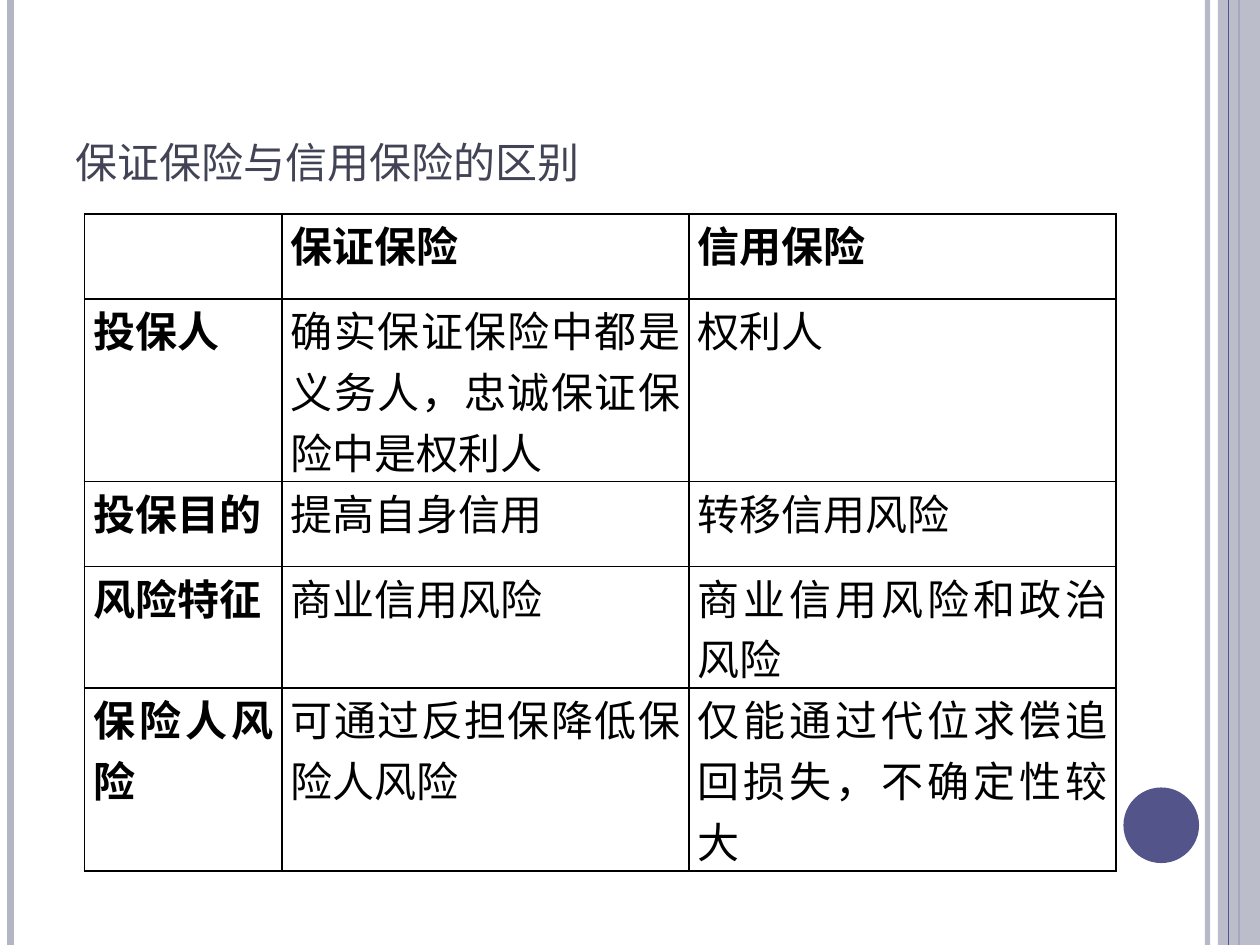
"""Builds a slide with a table comparing guarantee insurance and credit insurance."""
from dataclasses import dataclass

from lxml.etree import SubElement
from pptx import Presentation
from pptx.dml.color import RGBColor as RGB
from pptx.enum.shapes import MSO_CONNECTOR as CONN, MSO_SHAPE as SHAPE
from pptx.enum.text import MSO_ANCHOR as ANCHOR, PP_ALIGN as ALIGN
from pptx.oxml.ns import qn
from pptx.util import Pt


@dataclass(frozen=True)
class Theme:
    pale: str = "B3B4C4"
    accent: str = "53548A"
    title: str = "424456"
    ink: str = "000000"
    title_font: str = "Arial"
    table_font: str = "Times New Roman"
    title_size: float = 30
    table_size: float = 24
    border: float = 1
    inset: float = 5


T = Theme()
WIDTH, HEIGHT = 720, 540
TITLE = "保证保险与信用保险的区别"
ROWS = [
    ("", "保证保险", "信用保险"),
    ("投保人", "确实保证保险中都是义务人，忠诚保证保险中是权利人", "权利人"),
    ("投保目的", "提高自身信用", "转移信用风险"),
    ("风险特征", "商业信用风险", "商业信用风险和政治风险"),
    ("保险人风险", "可通过反担保降低保险人风险", "仅能通过代位求偿追回损失，不确定性较大"),
]
TITLE_BOX = (36, 21.6, 588, 90)
TABLE_POS = (48.2, 122.4)
COL_WIDTHS = (113, 232.6, 244)
ROW_HEIGHTS = (48.4, 97.2, 48.4, 48.4, 97.2)
STRIPES_BELOW = [(690, T.pale, 3, 93), (6, T.pale, 4.5, 100), (708, T.accent, 1.5, 100)]
STRIPES_ABOVE = [(702, T.accent, 0.75, 100)]
BAND = (696, 0, 24, HEIGHT)
DOT = (642, 450, 43.2, 43.2)


def pts(values):
    return [Pt(v) for v in values]


def paint(fill, color, opacity=100):
    fill.solid()
    fill.fore_color.rgb = RGB.from_string(color)
    if opacity < 100:
        clr = fill._xPr.find(".//" + qn("a:srgbClr"))
        SubElement(clr, qn("a:alpha"), val=str(opacity * 1000))


def add_stripe(slide, x, color, width, opacity):
    s = slide.shapes.add_connector(CONN.STRAIGHT, Pt(x), 0, Pt(x), Pt(HEIGHT))
    s.line.width = Pt(width)
    paint(s.line.fill, color, opacity)
    SubElement(s._element.spPr, qn("a:effectLst"))


def add_solid(slide, kind, box, color, opacity=100):
    s = slide.shapes.add_shape(kind, *pts(box))
    s.shadow.inherit = False
    s.line.fill.background()
    paint(s.fill, color, opacity)


def add_run(p, text, font, size, color, bold=False):
    r = p.add_run()
    r.text = text
    r.font.name, r.font.size, r.font.bold = font, Pt(size), bold
    r.font.color.rgb = RGB.from_string(color)
    return r


def add_title(slide):
    s = slide.shapes.title
    s.left, s.top, s.width, s.height = pts(TITLE_BOX)
    tf = s.text_frame
    tf.word_wrap, tf.vertical_anchor = True, ANCHOR.BOTTOM
    p = tf.paragraphs[0]
    p.alignment = ALIGN.LEFT
    r = add_run(p, TITLE, T.title_font, T.title_size, T.title)
    r.font._element.set("cap", "small")


def add_borders(cell):
    tc_pr = cell._tc.get_or_add_tcPr()
    for side in ("a:lnL", "a:lnR", "a:lnT", "a:lnB"):
        ln = SubElement(tc_pr, qn(side), w=str(Pt(T.border)))
        SubElement(SubElement(ln, qn("a:solidFill")), qn("a:srgbClr"), val=T.ink)


def fill_cell(cell, text, bold):
    add_borders(cell)
    cell.fill.background()
    cell.margin_left = cell.margin_right = Pt(T.inset)
    cell.margin_top = cell.margin_bottom = 0
    p = cell.text_frame.paragraphs[0]
    p.alignment = ALIGN.JUSTIFY
    if text:
        add_run(p, text, T.table_font, T.table_size, T.ink, bold)


def add_comparison(slide):
    size = (sum(COL_WIDTHS), sum(ROW_HEIGHTS))
    table = slide.shapes.add_table(len(ROWS), len(COL_WIDTHS), *pts(TABLE_POS + size)).table
    table.first_row = table.horz_banding = False
    for col, width in zip(table.columns, COL_WIDTHS):
        col.width = Pt(width)
    for i, (row, height) in enumerate(zip(table.rows, ROW_HEIGHTS)):
        row.height = Pt(height)
        for j, text in enumerate(ROWS[i]):
            fill_cell(table.cell(i, j), text, bold=i == 0 or j == 0)


def main():
    prs = Presentation()
    prs.slide_width, prs.slide_height = Pt(WIDTH), Pt(HEIGHT)
    slide = prs.slides.add_slide(prs.slide_layouts[5])
    for stripe in STRIPES_BELOW:
        add_stripe(slide, *stripe)
    add_solid(slide, SHAPE.RECTANGLE, BAND, T.pale, 87)
    for stripe in STRIPES_ABOVE:
        add_stripe(slide, *stripe)
    add_solid(slide, SHAPE.OVAL, DOT, T.accent)
    add_title(slide)
    add_comparison(slide)
    prs.save("out.pptx")


if __name__ == "__main__":
    main()
